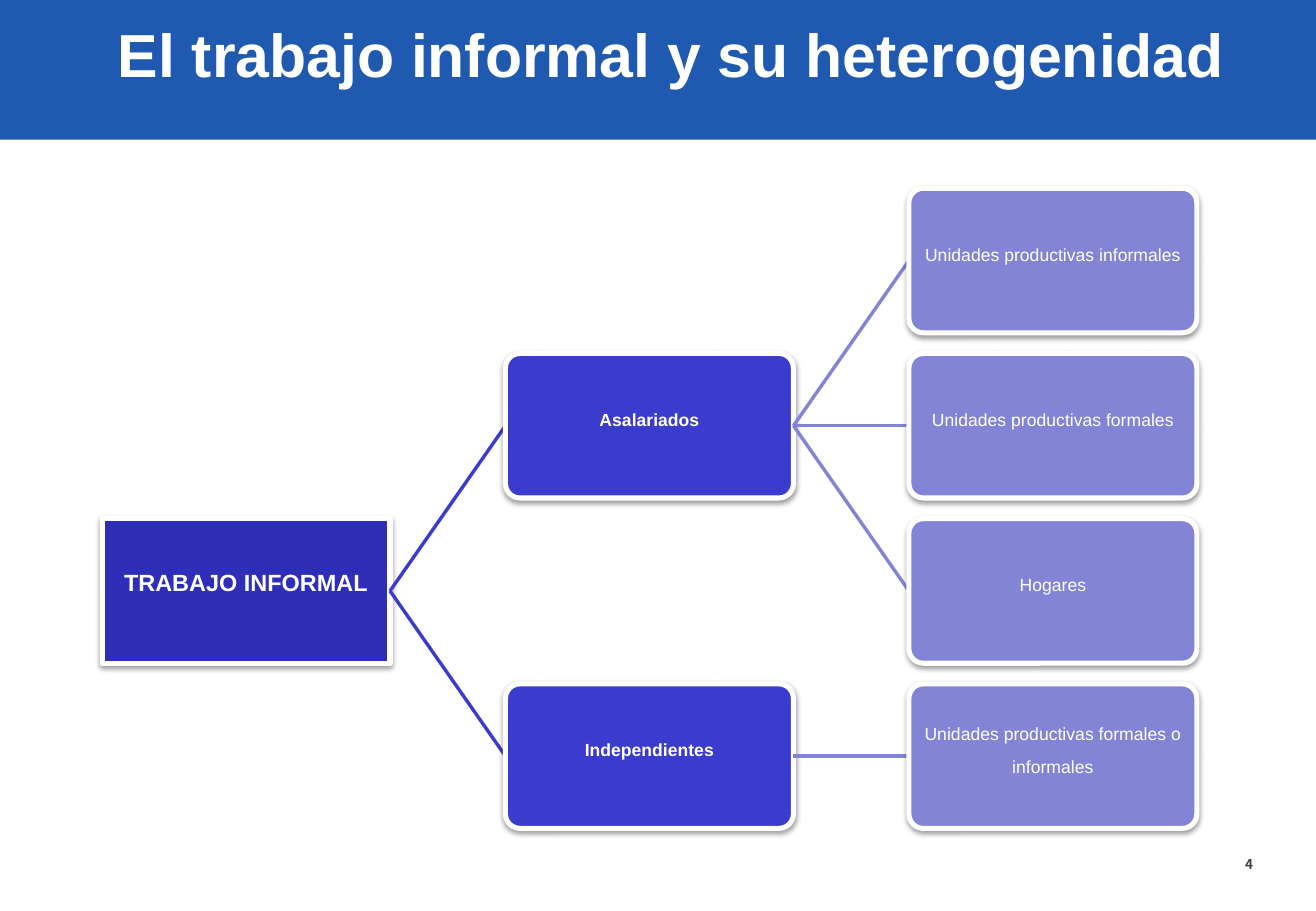
import pptx
import pptx.dml.color
import pptx.enum.shapes
import pptx.enum.text
import pptx.oxml
import pptx.oxml.ns
import pptx.util
from pptx.util import Inches

SHAPES = pptx.enum.shapes.MSO_SHAPE
ALIGN = pptx.enum.text.PP_ALIGN
ANCHOR = pptx.enum.text.MSO_ANCHOR
BOX_WIDTH, BOX_HEIGHT = 2.37, 1.19
COLUMN_STEP, ROW_STEP = 3.32, 1.36
LEVEL_COLOURS = ["2E2EB9", "3B3BCD", "8484D7"]
SHADOW = (
    f'<a:effectLst {pptx.oxml.ns.nsdecls("a")}>'
    '<a:outerShdw blurRad="40000" dist="20000" dir="5400000" rotWithShape="0">'
    '<a:srgbClr val="000000"><a:alpha val="38000"/></a:srgbClr>'
    '</a:outerShdw></a:effectLst>'
)
NO_EFFECTS = f'<a:effectLst {pptx.oxml.ns.nsdecls("a")}/>'

TREE = ("TRABAJO INFORMAL", 2, [
    ("Asalariados", 1, [
        ("Unidades productivas informales", 0, []),
        ("Unidades productivas formales", 1, []),
        ("Hogares", 2, []),
    ]),
    ("Independientes", 3, [
        ("Unidades productivas formales o informales", 3, []),
    ]),
])


def colour(value):
    return pptx.dml.color.RGBColor.from_string(value)


def write(shape, text, size, font="Arial", fill="FFFFFF", bold=False,
          align=ALIGN.CENTER, anchor=ANCHOR.MIDDLE, margin=None,
          line_spacing=None, space_after=None, baseline=None):
    frame = shape.text_frame
    frame.word_wrap = True
    frame.vertical_anchor = anchor
    if margin is not None:
        frame.margin_left = frame.margin_right = Inches(margin)
        frame.margin_top = frame.margin_bottom = Inches(margin)
    para = frame.paragraphs[0]
    para.alignment = align
    if line_spacing:
        para.line_spacing = line_spacing
    if space_after:
        para.space_after = pptx.util.Pt(space_after)
    span = para.add_run()
    span.text = text
    span.font.name = font
    span.font.size = pptx.util.Pt(size)
    span.font.bold = bold
    span.font.color.rgb = colour(fill)
    if baseline:
        span.font._element.set("baseline", str(baseline * 1000))


def add_band_and_title(page):
    band = page.shapes.add_shape(SHAPES.RECTANGLE, 0, 0, Inches(10.83), Inches(1.15))
    band.shadow.inherit = False
    band.fill.solid()
    band.fill.fore_color.rgb = colour("1F59B0")
    band.line.fill.background()
    page.shapes._spTree.insert(2, band._element)
    title = page.shapes.title
    title.left, title.top = Inches(0.45), Inches(0.09)
    title.width, title.height = Inches(10.15), Inches(1.46)
    write(title, "El trabajo informal y su heterogenidad", 36, bold=True, anchor=ANCHOR.TOP)


def add_box(page, text, left, top, level):
    kind = SHAPES.ROUNDED_RECTANGLE if level else SHAPES.RECTANGLE
    box = page.shapes.add_shape(
        kind, Inches(left), Inches(top), Inches(BOX_WIDTH), Inches(BOX_HEIGHT))
    if level:
        box.adjustments[0] = 0.1
    box.fill.solid()
    box.fill.fore_color.rgb = colour(LEVEL_COLOURS[level])
    box.line.color.rgb = colour("FFFFFF")
    box.line.width = pptx.util.Pt(3)
    box._element.spPr.append(pptx.oxml.parse_xml(SHADOW))
    size = 18 if level else 24
    write(box, text, size, bold=level < 2, margin=0.01 if level else 0.02,
          line_spacing=0.9, space_after=0.35 * size, baseline=30)


def add_link(page, start, end, fill):
    link = page.shapes.add_connector(
        pptx.enum.shapes.MSO_CONNECTOR.STRAIGHT,
        Inches(start[0]), Inches(start[1]), Inches(end[0]), Inches(end[1]))
    link.line.color.rgb = colour(fill)
    link.line.width = pptx.util.Pt(2)
    link._element.spPr.append(pptx.oxml.parse_xml(NO_EFFECTS))


def add_branch(page, branch, level=0, parent_end=None):
    text, row, children = branch
    left = 0.84 + level * COLUMN_STEP
    top = 1.55 + row * ROW_STEP
    middle = top + BOX_HEIGHT / 2
    if parent_end:
        add_link(page, parent_end, (left, middle), LEVEL_COLOURS[level])
    add_box(page, text, left, top, level)
    for child in children:
        add_branch(page, child, level + 1, (left + BOX_WIDTH, middle))


def add_page_number(page):
    box = page.shapes.add_textbox(Inches(8.16), Inches(7), Inches(2.25), Inches(0.5))
    write(box, "4", 8, font="Noto Sans CJK JP", fill="404040", bold=True,
          align=ALIGN.RIGHT, anchor=ANCHOR.TOP)


def main():
    deck = pptx.Presentation()
    deck.slide_width, deck.slide_height = Inches(10.83), Inches(7.5)
    page = deck.slides.add_slide(deck.slide_layouts[5])
    add_band_and_title(page)
    add_branch(page, TREE)
    add_page_number(page)
    deck.save("out.pptx")


if __name__ == "__main__":
    main()
